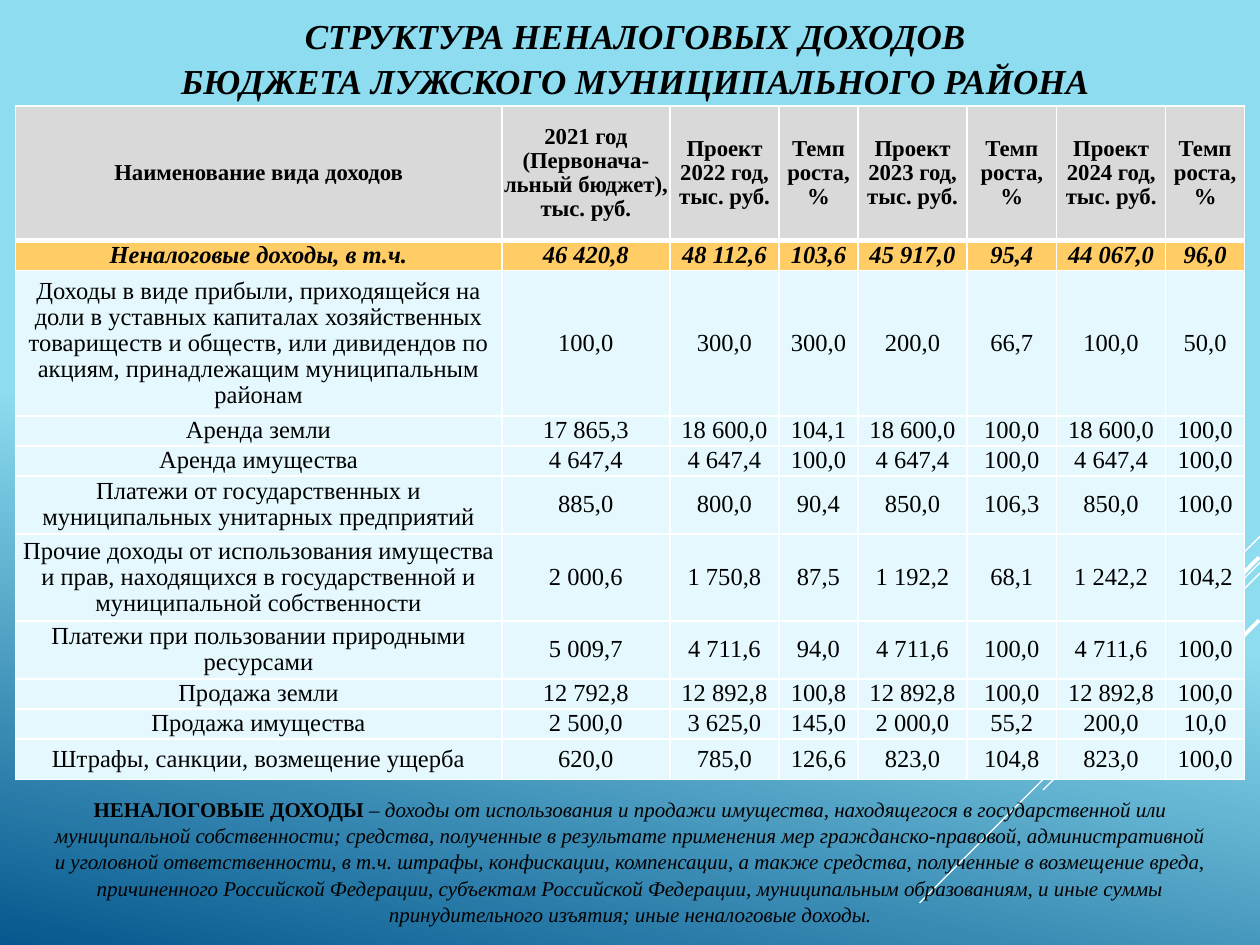
from lxml import etree
from pptx import Presentation
from pptx.dml.color import RGBColor
from pptx.enum.shapes import MSO_CONNECTOR, MSO_SHAPE
from pptx.enum.text import MSO_ANCHOR, MSO_AUTO_SIZE, PP_ALIGN
from pptx.oxml.ns import qn
from pptx.util import Pt

FONT = "Times New Roman"
BLACK, WHITE = "000000", "FFFFFF"
HEADER_FILL, TOTAL_FILL, ROW_FILL = "D9D9D9", "FFCC66", "E4F8FD"

COLUMN_WIDTHS = [278, 96, 62.5, 45, 62.5, 51, 62.5, 45]
ROW_HEIGHTS = [77, 17.2, 83, 17.2, 17.2, 33, 50, 33, 17.2, 17.2, 23]
HEADINGS = [
    "Наименование вида доходов",
    "2021 год (Первонача-\nльный бюджет), тыс. руб.",
    "Проект 2022 год, тыс. руб.",
    "Темп роста,\n%",
    "Проект 2023 год, тыс. руб.",
    "Темп роста, %",
    "Проект 2024 год, тыс. руб.",
    "Темп роста, %",
]
INCOME = [
    ["Неналоговые доходы, в т.ч.",
     "46 420,8", "48 112,6", "103,6", "45 917,0", "95,4", "44 067,0", "96,0"],
    ["Доходы в виде прибыли, приходящейся на доли в уставных капиталах "
     "хозяйственных товариществ и обществ, или дивидендов по акциям, "
     "принадлежащим муниципальным районам",
     "100,0", "300,0", "300,0", "200,0", "66,7", "100,0", "50,0"],
    ["Аренда земли",
     "17 865,3", "18 600,0", "104,1", "18 600,0", "100,0", "18 600,0", "100,0"],
    ["Аренда имущества",
     "4 647,4", "4 647,4", "100,0", "4 647,4", "100,0", "4 647,4", "100,0"],
    ["Платежи от государственных и муниципальных унитарных предприятий",
     "885,0", "800,0", "90,4", "850,0", "106,3", "850,0", "100,0"],
    ["Прочие доходы от использования имущества и прав, находящихся в "
     "государственной и муниципальной собственности",
     "2 000,6", "1 750,8", "87,5", "1 192,2", "68,1", "1 242,2", "104,2"],
    ["Платежи при пользовании природными ресурсами",
     "5 009,7", "4 711,6", "94,0", "4 711,6", "100,0", "4 711,6", "100,0"],
    ["Продажа земли",
     "12 792,8", "12 892,8", "100,8", "12 892,8", "100,0", "12 892,8", "100,0"],
    ["Продажа имущества",
     "2 500,0", "3 625,0", "145,0", "2 000,0", "55,2", "200,0", "10,0"],
    ["Штрафы, санкции, возмещение ущерба",
     "620,0", "785,0", "126,6", "823,0", "104,8", "823,0", "100,0"],
]
DEFINITION = [
    ("НЕНАЛОГОВЫЕ ДОХОДЫ", True, False),
    (" – ", False, False),
    ("доходы от использования и продажи имущества, находящегося в государственной "
     "или муниципальной собственности; средства, полученные в результате применения "
     "мер гражданско-правовой, административной и уголовной ответственности, в т.ч. "
     "штрафы, конфискации, компенсации, а также средства, полученные в возмещение "
     "вреда, причиненного Российской Федерации, субъектам Российской Федерации, "
     "муниципальным образованиям, и иные суммы принудительного изъятия; иные "
     "неналоговые доходы.", False, True),
]
# Start x, start y, run to the lower left at 45 degrees, line width
RAYS = [
    (720, 306.5, 59.5, 0.75),
    (720, 321.5, 194.5, 0.75),
    (720, 327.5, 124, 0.75),
    (719.5, 318.5, 113, 2.25),
    (719.5, 354.5, 82, 2.25),
]


def color(hex_string):
    return RGBColor.from_string(hex_string)


def format_paragraph(paragraph, size, bold=None, italic=None, spacing=1.0):
    paragraph.alignment = PP_ALIGN.CENTER
    paragraph.line_spacing = spacing
    font = paragraph.font
    font.name, font.size, font.bold, font.italic = FONT, Pt(size), bold, italic
    font.color.rgb = color(BLACK)


def set_borders(cell, **widths):
    """Draw white borders; the keys are L, R, T and B."""
    properties = cell._tc.get_or_add_tcPr()
    for position, side in enumerate("LRTB"):
        line = etree.Element(qn(f"a:ln{side}"), w=str(Pt(widths.get(side, 1))))
        fill = etree.SubElement(line, qn("a:solidFill"))
        etree.SubElement(fill, qn("a:srgbClr"), val=WHITE)
        properties.insert(position, line)


def paint_background(slide):
    fill = slide.background.fill
    fill.gradient()
    fill.gradient_angle = 258
    for stop, (position, shade) in zip(fill.gradient_stops,
                                       [(0.54, "8DDCF0"), (1, "06588E")]):
        stop.position = position
        stop.color.rgb = color(shade)


def add_rays(slide):
    for x, y, run, width in RAYS:
        ray = slide.shapes.add_connector(MSO_CONNECTOR.STRAIGHT, Pt(x), Pt(y),
                                         Pt(x - run), Pt(y + run))
        ray.line.color.rgb = color(WHITE)
        ray.line.width = Pt(width)
        etree.SubElement(ray._element.spPr, qn("a:effectLst"))


def place_title(slide, left, top, width, height):
    title = slide.shapes.title
    title.left, title.top, title.width, title.height = map(Pt, (left, top, width, height))
    frame = title.text_frame
    frame.text = "СТРУКТУРА НЕНАЛОГОВЫХ ДОХОДОВ\vБЮДЖЕТА ЛУЖСКОГО МУНИЦИПАЛЬНОГО РАЙОНА"
    frame.word_wrap = True
    frame.auto_size = MSO_AUTO_SIZE.NONE
    frame.vertical_anchor = MSO_ANCHOR.MIDDLE
    format_paragraph(frame.paragraphs[0], 20, True, True, 1.09)


def add_income_table(slide, left, top):
    rows = [HEADINGS] + INCOME
    table = slide.shapes.add_table(
        len(rows), len(HEADINGS), Pt(left), Pt(top),
        Pt(sum(COLUMN_WIDTHS)), Pt(sum(ROW_HEIGHTS))).table
    for column, width in zip(table.columns, COLUMN_WIDTHS):
        column.width = Pt(width)
    for row, height in zip(table.rows, ROW_HEIGHTS):
        row.height = Pt(height)

    for r, row in enumerate(rows):
        fill = {0: HEADER_FILL, 1: TOTAL_FILL}.get(r, ROW_FILL)
        for c, text in enumerate(row):
            cell = table.cell(r, c)
            cell.text = text
            cell.margin_left = cell.margin_right = cell.margin_top = cell.margin_bottom = 0
            cell.vertical_anchor = MSO_ANCHOR.MIDDLE
            cell.fill.solid()
            cell.fill.fore_color.rgb = color(fill)
            # A thick rule separates the header from the total
            set_borders(cell, B=3 if r == 0 else 1, T=3 if r == 1 else 1)
            for paragraph in cell.text_frame.paragraphs:
                format_paragraph(paragraph, 13 if r == 0 else 14, r < 2, r == 1, 0.96)


def add_definition(slide, left, top, width, height):
    box = slide.shapes.add_shape(MSO_SHAPE.ROUNDED_RECTANGLE,
                                 Pt(left), Pt(top), Pt(width), Pt(height))
    box.shadow.inherit = False
    box.fill.background()
    box.line.fill.background()
    frame = box.text_frame
    frame.word_wrap = True
    frame.vertical_anchor = MSO_ANCHOR.MIDDLE
    paragraph = frame.paragraphs[0]
    format_paragraph(paragraph, 12, spacing=1.05)
    for text, bold, italic in DEFINITION:
        run = paragraph.add_run()
        run.text = text
        run.font.bold, run.font.italic = bold, italic


def main():
    deck = Presentation()
    deck.slide_width, deck.slide_height = Pt(720), Pt(540)
    slide = deck.slides.add_slide(deck.slide_layouts[5])
    paint_background(slide)
    add_rays(slide)
    place_title(slide, 20, 3, 686, 58)
    add_income_table(slide, 8.75, 60.5)
    add_definition(slide, 20, 453, 680.5, 78)
    deck.save("out.pptx")


if __name__ == "__main__":
    main()
